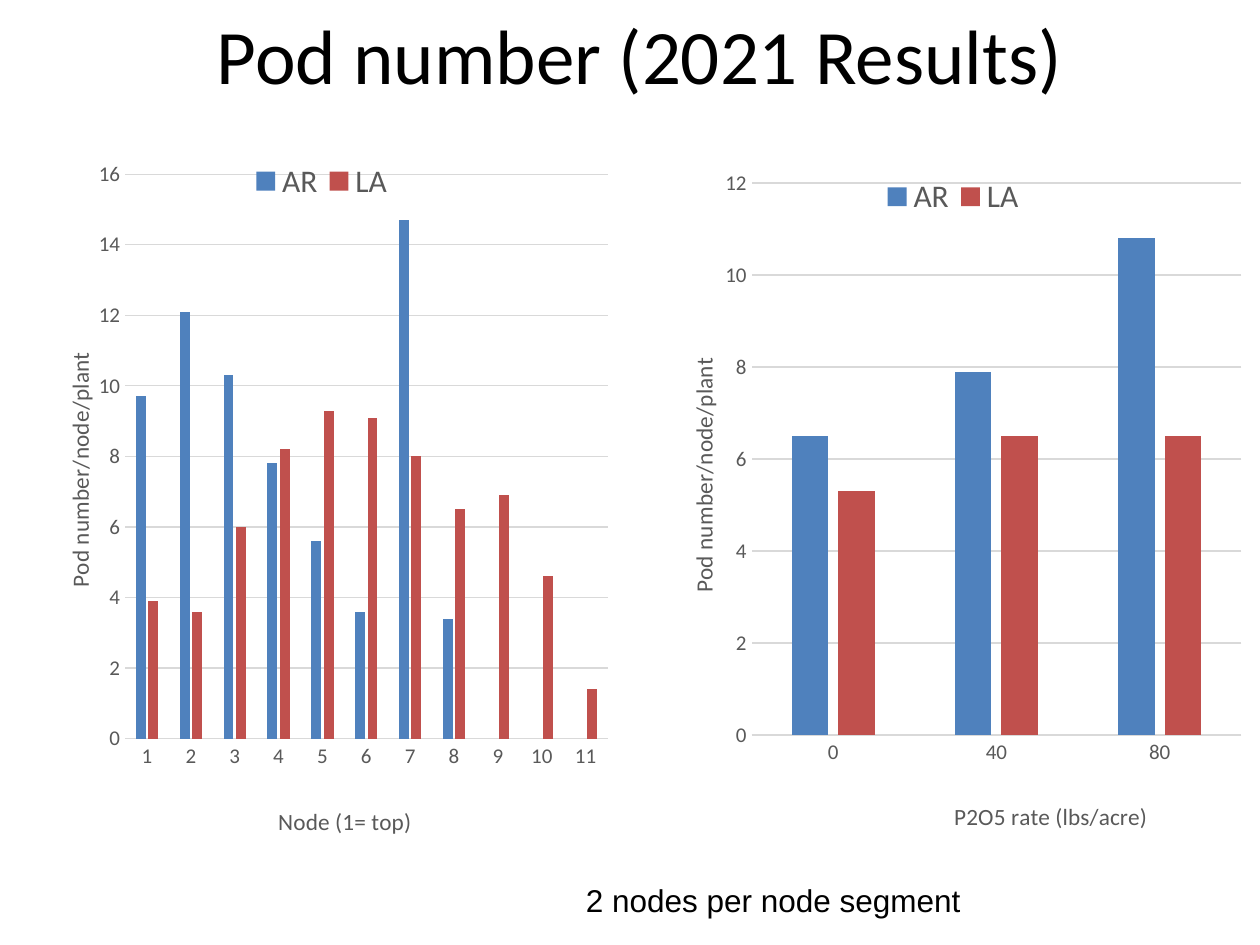
from lxml import etree
from pptx import Presentation
from pptx.chart.data import CategoryChartData
from pptx.dml.color import RGBColor
from pptx.enum.chart import XL_CHART_TYPE, XL_LEGEND_POSITION, XL_TICK_MARK
from pptx.enum.text import MSO_ANCHOR, PP_ALIGN
from pptx.oxml import parse_xml
from pptx.oxml.ns import nsdecls, qn
from pptx.util import Cm, Pt

COLUMNS = XL_CHART_TYPE.COLUMN_CLUSTERED
LEGEND_TOP = XL_LEGEND_POSITION.TOP
NO_TICKS = XL_TICK_MARK.NONE
MIDDLE = MSO_ANCHOR.MIDDLE
CENTER, LEFT = PP_ALIGN.CENTER, PP_ALIGN.LEFT

BLACK, GRAY, GRID = "000000", "595959", "D9D9D9"
SERIES_COLORS = {"AR": "4F81BD", "LA": "C0504D"}
VALUE_TITLE = "Pod number/node/plant"


def color(value):
    return RGBColor.from_string(value)


def set_format(target, values):
    for name, value in values.items():
        setattr(target, name, value)


def set_font(font, size, value, name="Calibri"):
    set_format(font, {"size": Pt(size), "name": name, "bold": False})
    font.color.rgb = color(value)


def set_line(line, value):
    line.color.rgb = color(value)
    line.width = Pt(0.75)


def add_text(slide, box, text, size, font_name, alignment, wrap):
    shape = slide.shapes.add_textbox(*map(Cm, box))
    frame = shape.text_frame
    set_format(frame, {"word_wrap": wrap, "vertical_anchor": MIDDLE})
    paragraph = frame.paragraphs[0]
    set_format(paragraph, {"text": text, "alignment": alignment})
    set_font(paragraph.font, size, BLACK, font_name)


def set_layout(element, position, inner=False):
    """Place a chart part at x, y and optional width, height, as shares of the chart."""
    for old in element.findall(qn("c:layout")):
        element.remove(old)
    layout = parse_xml(f"<c:layout {nsdecls('c')}><c:manualLayout/></c:layout>")
    manual = layout[0]
    settings = [("layoutTarget", "inner")] if inner else []
    settings += [("xMode", "edge"), ("yMode", "edge"), *zip("xywh", position)]
    for tag, value in settings:
        etree.SubElement(manual, qn(f"c:{tag}")).set("val", str(value))
    overlay = element.find(qn("c:overlay"))
    if overlay is None:
        element.insert(0, layout)
    else:
        overlay.addprevious(layout)


def format_axis(axis, title, position):
    set_format(axis, {"has_title": True, "major_tick_mark": NO_TICKS,
                      "minor_tick_mark": NO_TICKS})
    set_font(axis.tick_labels.font, 12, GRAY)
    paragraph = axis.axis_title.text_frame.paragraphs[0]
    run = paragraph.add_run()
    run.text = title
    set_font(run.font, 13.3, GRAY)
    set_layout(axis.axis_title._element, position)


def add_pod_chart(slide, box, categories, series, category_title, maximum, places):
    data = CategoryChartData(number_format="General")
    data.categories = categories
    for name, values in series.items():
        data.add_series(name, values)
    chart = slide.shapes.add_chart(COLUMNS, *map(Cm, box), data).chart
    set_format(chart, {"has_title": False, "has_legend": True})
    set_font(chart.font, 10, BLACK)

    plot = chart.plots[0]
    set_format(plot, {"gap_width": 219, "overlap": -27, "vary_by_categories": False})
    for column in plot.series:
        column.format.fill.solid()
        column.format.fill.fore_color.rgb = color(SERIES_COLORS[column.name])
        column.invert_if_negative = False

    format_axis(chart.category_axis, category_title, places["category title"])
    set_line(chart.category_axis.format.line, GRID)
    value_axis = chart.value_axis
    format_axis(value_axis, VALUE_TITLE, places["value title"])
    set_format(value_axis, {"minimum_scale": 0, "maximum_scale": maximum,
                            "major_unit": 2, "has_major_gridlines": True})
    value_axis.format.line.fill.background()
    set_line(value_axis.major_gridlines.format.line, GRID)

    legend = chart.legend
    set_format(legend, {"position": LEGEND_TOP, "include_in_layout": True})
    set_font(legend.font, 18, GRAY)
    set_layout(legend._element, places["legend"])
    plot_area = chart._chartSpace.find(f".//{qn('c:plotArea')}")
    set_layout(plot_area, places["plot"], inner=True)


def build_slide(presentation):
    slide = presentation.slides.add_slide(presentation.slide_layouts[6])
    add_text(slide, (1.47, -0.51, 22.86, 3.18), "Pod number (2021 Results)",
             44, "Calibri", CENTER, True)
    add_pod_chart(
        slide, (0.48, 2.95, 12.01, 14.07), [str(node) for node in range(1, 12)],
        {"AR": [9.7, 12.1, 10.3, 7.8, 5.6, 3.6, 14.7, 3.4, None, None, None],
         "LA": [3.9, 3.6, 6, 8.2, 9.3, 9.1, 8, 6.5, 6.9, 4.6, 1.4]},
        "Node (1= top)", 16,
        {"plot": (0.17, 0.04, 0.81, 0.81), "legend": (0.37, 0.02, 0.26, 0.06),
         "category title": (0.42, 0.94), "value title": (0.06, 0.29)})
    add_pod_chart(
        slide, (12.9, 3.28, 12.5, 13.74), ["0", "40", "80"],
        {"AR": [6.5, 7.9, 10.8], "LA": [5.3, 6.5, 6.5]},
        "P2O5 rate (lbs/acre)", 12,
        {"plot": (0.18, 0.03, 0.79, 0.81), "legend": (0.38, 0.02, 0.25, 0.06),
         "category title": (0.5, 0.93), "value title": (0.07, 0.28)})
    add_text(slide, (11.56, 17.63, 8.13, 1.02), "2 nodes per node segment",
             18, "Arial", LEFT, False)


def main():
    presentation = Presentation()
    set_format(presentation, {"slide_width": Cm(25.4), "slide_height": Cm(19.05)})
    build_slide(presentation)
    presentation.save("out.pptx")


if __name__ == "__main__":
    main()
